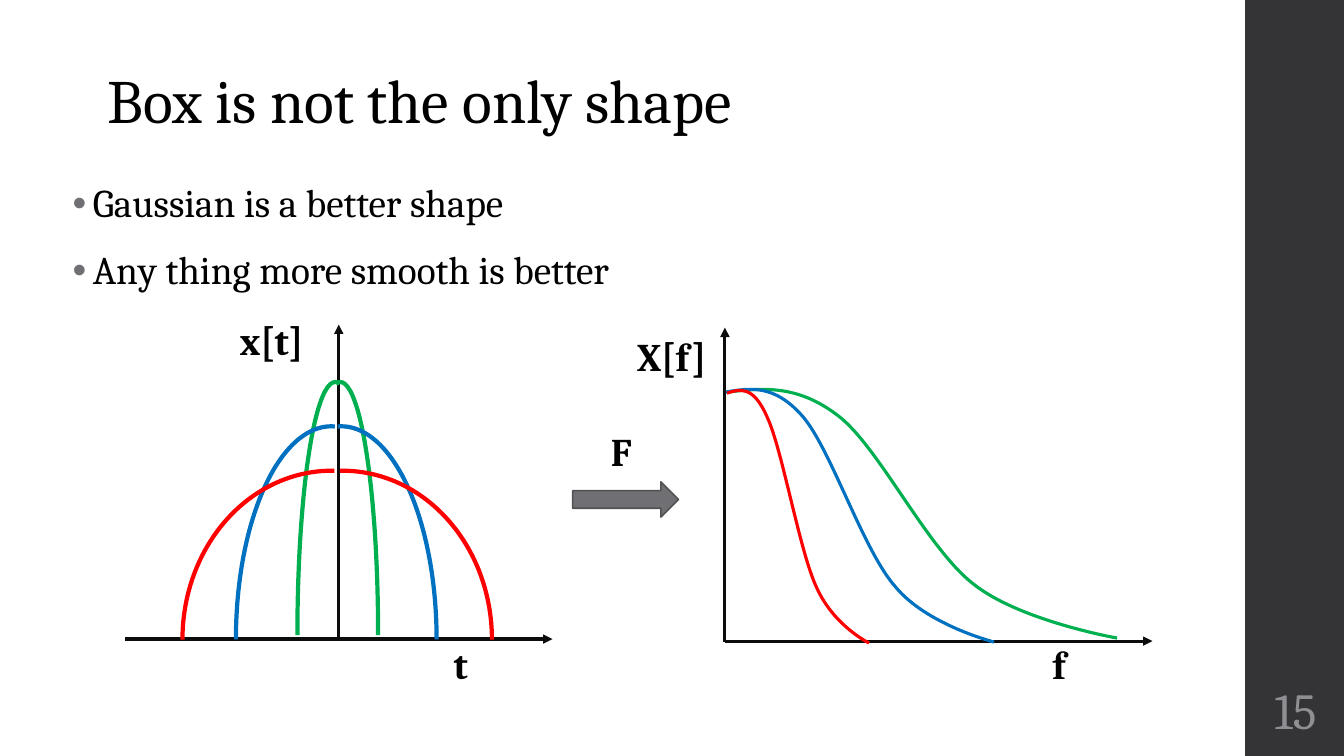
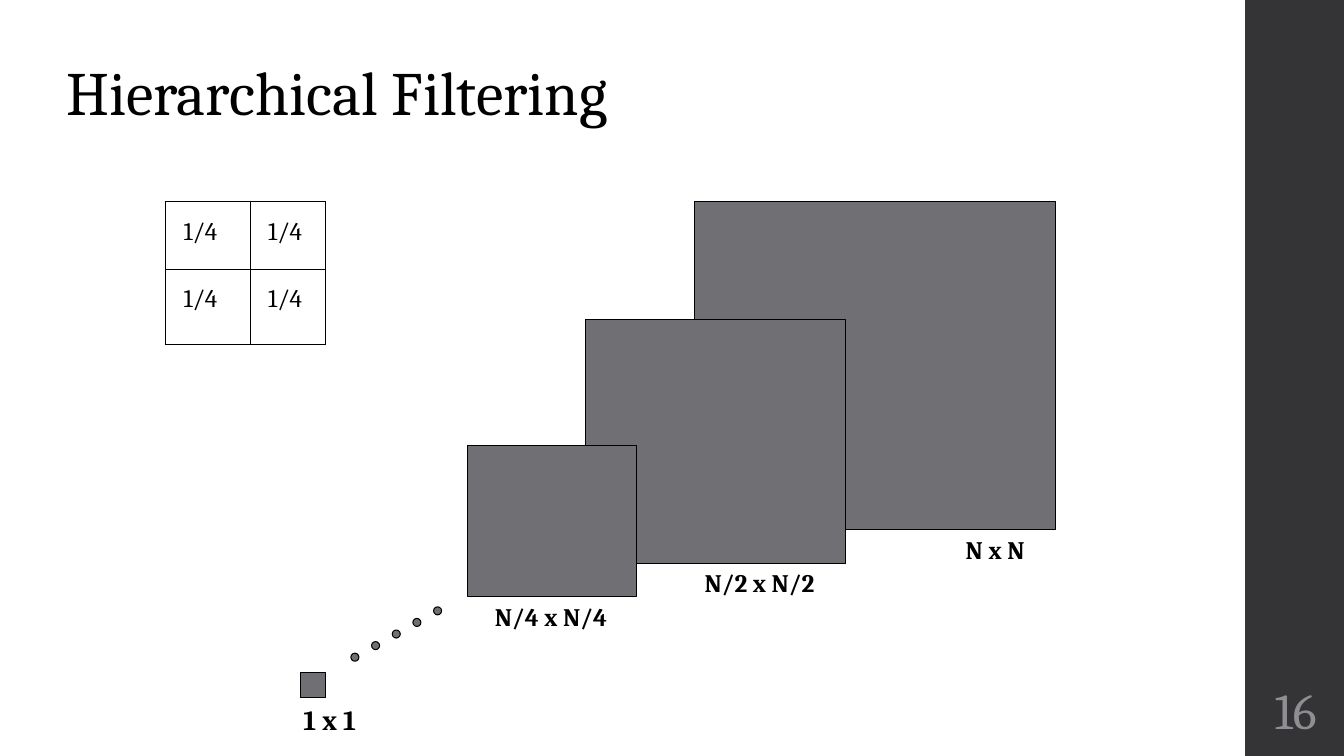
from lxml import etree
from pptx import Presentation
from pptx.dml.color import RGBColor
from pptx.enum.shapes import MSO_CONNECTOR, MSO_SHAPE as SHAPE
from pptx.enum.text import MSO_ANCHOR as ANCHOR, MSO_AUTO_SIZE, PP_ALIGN as ALIGN
from pptx.oxml.ns import qn
from pptx.util import Emu, Pt

PX = 9144  # one px is a hundredth of an inch
FONT = "Cambria"
BLACK = RGBColor(0x00, 0x00, 0x00)
AXIS = RGBColor(0x0C, 0x0C, 0x0C)
BAND = RGBColor(0x34, 0x34, 0x37)
GRAY = RGBColor(0x6F, 0x6F, 0x74)
GRAY_EDGE = RGBColor(0x51, 0x51, 0x54)
NUMBER = RGBColor(0x8E, 0x8E, 0x93)
GREEN = RGBColor(0x00, 0xB0, 0x50)
BLUE = RGBColor(0x00, 0x70, 0xC0)
RED = RGBColor(0xFF, 0x00, 0x00)

# Content: smooth filter shapes
BULLETS = ["Gaussian is a better shape", "Any thing more smooth is better"]
AXES = [  # from x, from y, to x, to y
    (336, 634, 336, 322), (124, 634, 548, 634),
    (719, 637, 719, 325), (719, 636, 1143, 636),
]
AXIS_LABELS = [  # text, left, top, width
    ("t", 440, 630, 37), ("x[t]", 228, 309, 91), ("F", 596, 419, 49),
    ("f", 1034, 630, 37), ("X[f]", 622, 325, 94),
]
BELLS = [  # colour, left of right half, left of left half, top, width, height
    (GREEN, 300, 295, 379, 75, 502),
    (BLUE, 244, 234, 423, 189, 423),
    (RED, 192, 181, 467, 296, 335),
]
# Falling curve: start, then three Bezier points for each of three segments
FALLOFF = [(0, 0),
           (35, -4), (70, -8), (111, 24),
           (151, 55), (198, 154), (244, 190),
           (290, 227), (387, 244), (387, 244)]
SPECTRA = [  # colour, left, top, width, height
    (GREEN, 721, 389, 387, 244), (BLUE, 720, 389, 266, 248), (RED, 721, 390, 141, 248),
]

# Content: image pyramid
LEVELS = [(689, 200, 358, 325), (581, 317, 258, 242), (464, 442, 167, 150), (298, 667, 25, 25)]
LEVEL_LABELS = [  # text, left, top, width, size
    ("N x N", 948, 525, 92, 18), ("N/2 x N/2", 689, 558, 135, 18),
    ("N/4 x N/4", 481, 592, 135, 18), ("1 x 1", 291, 692, 86, 20),
]
WEIGHTS = [["1/4", "1/4"], ["1/4", "1/4"]]
WEIGHT_COLUMNS, WEIGHT_ROWS = [84, 75], [67, 75]
DOT_COUNT = 5


def emu(*lengths):
    return [Emu(round(length * PX)) for length in lengths]


def write(frame, *lines, size, color=BLACK, bold=False, align=ALIGN.LEFT,
          anchor=ANCHOR.TOP, spacing=None, gap=0, bullet=False, side=10):
    frame.word_wrap = True
    frame.auto_size = MSO_AUTO_SIZE.NONE
    frame.vertical_anchor = anchor
    frame.margin_left, frame.margin_right, frame.margin_top, frame.margin_bottom = emu(side, side, 5, 5)
    for index, line in enumerate(lines):
        para = frame.add_paragraph() if index else frame.paragraphs[0]
        if bullet:
            add_bullet(para)
        para.alignment = align
        para.space_before = Pt(gap if index else 0)
        if spacing:
            para.line_spacing = spacing
        style(para.add_run(), line, size, color, bold)


def style(span, line, size, color=BLACK, bold=False):
    span.text = line
    span.font.name, span.font.size, span.font.bold = FONT, Pt(size), bold
    span.font.color.rgb = color


def add_bullet(para):
    props = para._p.get_or_add_pPr()
    props.set("marL", str(20 * PX))
    props.set("indent", str(-20 * PX))
    tint = etree.SubElement(props, qn("a:buClr"))
    etree.SubElement(tint, qn("a:srgbClr")).set("val", str(GRAY))
    etree.SubElement(props, qn("a:buChar")).set("char", "•")


def label(page, text, left, top, width, height, **form):
    box = page.shapes.add_textbox(*emu(left, top, width, height))
    write(box.text_frame, text, **form)


def paint(shape, fill=None, line=None, weight=0.75):
    shape.shadow.inherit = False
    if fill is None:
        shape.fill.background()
    else:
        shape.fill.solid()
        shape.fill.fore_color.rgb = fill
    if line is None:
        shape.line.fill.background()
    else:
        shape.line.color.rgb = line
        shape.line.width = Pt(weight)


def draw(page, kind, at, **look):
    shape = page.shapes.add_shape(kind, *emu(*at))
    paint(shape, **look)
    return shape


def axis(page, ends):
    line = page.shapes.add_connector(MSO_CONNECTOR.STRAIGHT, *emu(*ends))
    line.line.color.rgb = AXIS
    line.line.width = Pt(2.25)
    etree.SubElement(line.line._get_or_add_ln(), qn("a:tailEnd")).set("type", "triangle")
    etree.SubElement(line.element.spPr, qn("a:effectLst"))


def quarter_arc(page, at, color, flipped):
    arc = draw(page, SHAPE.ARC, at, line=color, weight=3)
    arc.adjustments[0], arc.adjustments[1] = 161.423, 0
    if flipped:
        arc.element.spPr.find(qn("a:xfrm")).set("flipH", "1")


def spectrum(page, color, left, top, width, height):
    full_width, full_height = FALLOFF[-1]
    points = [(round(left + x * width / full_width), round(top + y * height / full_height))
              for x, y in FALLOFF]
    builder = page.shapes.build_freeform(*points[0], scale=PX)
    builder.add_line_segments(points[1:], close=False)
    curve = builder.convert_to_shape()
    paint(curve, line=color, weight=2.25)
    # Turn each three straight steps into one Bezier segment
    outline = next(curve.element.iter(qn("a:path")))
    steps = outline.findall(qn("a:lnTo"))
    for start in range(0, len(steps), 3):
        bezier = etree.SubElement(outline, qn("a:cubicBezTo"))
        for step in steps[start:start + 3]:
            bezier.append(step[0])
            outline.remove(step)


def weight_table(page, left, top):
    size = sum(WEIGHT_COLUMNS), sum(WEIGHT_ROWS)
    table = page.shapes.add_table(len(WEIGHTS), len(WEIGHTS[0]), *emu(left, top, *size)).table
    table.first_row = table.horz_banding = False
    for column, width in zip(table.columns, emu(*WEIGHT_COLUMNS)):
        column.width = width
    for row, height, values in zip(table.rows, emu(*WEIGHT_ROWS), WEIGHTS):
        row.height = height
        for cell, value in zip(row.cells, values):
            cell.margin_left, cell.margin_top, cell.margin_right, cell.margin_bottom = emu(18, 16, 5, 5)
            style(cell.text_frame.paragraphs[0].add_run(), value, 18)
            for side in ("a:lnL", "a:lnR", "a:lnT", "a:lnB"):
                border = etree.SubElement(cell._tc.get_or_add_tcPr(), qn(side))
                border.set("w", str(Pt(0.75)))
                ink = etree.SubElement(border, qn("a:solidFill"))
                etree.SubElement(ink, qn("a:srgbClr")).set("val", str(BLACK))
            cell.fill.background()


def place(holder, at):
    holder.left, holder.top, holder.width, holder.height = emu(*at)
    return holder.text_frame


def new_page(deck, layout, title, title_at, number):
    page = deck.slides.add_slide(deck.slide_layouts[layout])
    write(place(page.shapes.title, title_at), title, size=44, anchor=ANCHOR.BOTTOM, spacing=0.9)
    label(page, number, 1235, 675, 100, 65, size=36, color=NUMBER, align=ALIGN.CENTER,
          anchor=ANCHOR.MIDDLE, spacing=0.9, side=5)
    return page


def smooth_shapes(deck):
    page = new_page(deck, 1, "Box is not the only shape", (97, 40, 1101, 101), "15")
    body = place(page.placeholders[1], (62, 175, 1108, 501))
    write(body, *BULLETS, size=28, spacing=0.95, gap=16, bullet=True)
    for ends in AXES:
        axis(page, ends)
    for color, right, left, top, width, height in BELLS:
        quarter_arc(page, (right, top, width, height), color, False)
        quarter_arc(page, (left, top, width, height), color, True)
    draw(page, SHAPE.RIGHT_ARROW, (568, 478, 105, 35), fill=GRAY, line=GRAY_EDGE, weight=1.1)
    for text, left, top, width in AXIS_LABELS:
        label(page, text, left, top, width, 57, size=28, bold=True)
    for curve in SPECTRA:
        spectrum(page, *curve)
    return page


def image_pyramid(deck):
    page = new_page(deck, 5, "Hierarchical Filtering", (56, 40, 1142, 93), "16")
    for at in LEVELS:
        draw(page, SHAPE.RECTANGLE, at, fill=GRAY, line=BLACK)
    weight_table(page, 164, 200)
    for index in range(DOT_COUNT):
        draw(page, SHAPE.OVAL, (348 + 20.5 * index, 648 - 11.5 * index, 8, 8), fill=GRAY, line=BLACK)
    for text, left, top, width, size in LEVEL_LABELS:
        label(page, text, left, top, width, 40, size=size, bold=True)


def main():
    deck = Presentation()
    deck.slide_width, deck.slide_height = emu(1333, 750)
    page = smooth_shapes(deck)
    # The side band belongs to the master, behind every slide
    band = draw(page, SHAPE.RECTANGLE, (1235, 0, 98, 750), fill=BAND)
    deck.slide_master.shapes.element.append(band.element)
    image_pyramid(deck)
    deck.save("out.pptx")


if __name__ == "__main__":
    main()
